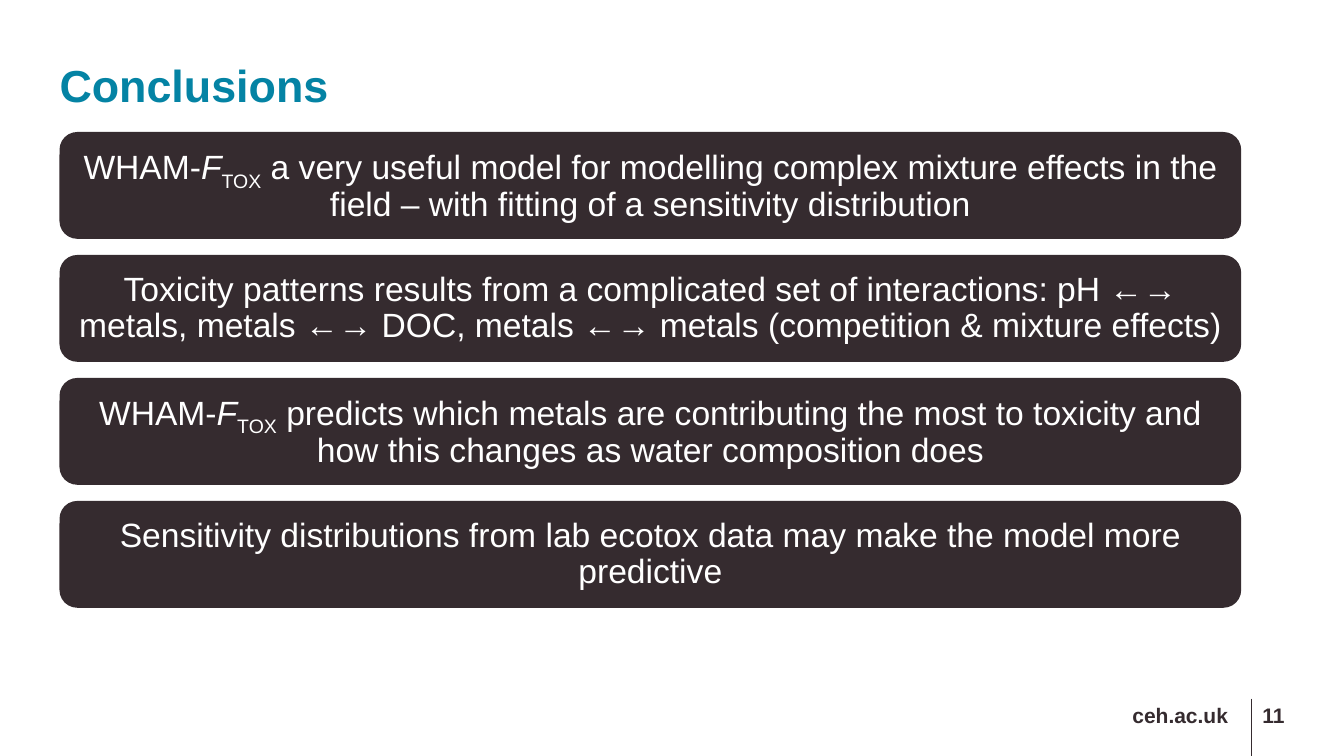
"""Build the Conclusions slide with four statement panels and a footer."""
from lxml import etree
from pptx import Presentation
from pptx.dml.color import RGBColor
from pptx.enum.shapes import MSO_CONNECTOR as Connector, MSO_SHAPE as Shape
from pptx.enum.text import MSO_ANCHOR as Anchor, PP_ALIGN as Align
from pptx.oxml.ns import qn
from pptx.util import Inches, Pt

COLORS = {"title": "0483A4", "dark": "352B2F", "white": "FFFFFF"}
LEFT, PANEL_TOP = 0.59, 1.31
PANEL_WIDTH, PANEL_HEIGHT, ROW_PITCH = 11.72, 1.06, 1.22
RULE_X, FOOTER_TOP, FOOTER_HEIGHT = 12.41, 7, 0.27

MODEL = [("WHAM-", ""), ("F", "italic"), ("TOX", "subscript")]
CONCLUSIONS = [
    MODEL + [(" a very useful model for modelling complex mixture effects in the field"
              " – with fitting of a sensitivity distribution", "")],
    [("Toxicity patterns results from a complicated set of interactions: pH ←→ metals,"
      " metals ←→ DOC, metals ←→ metals (competition & mixture effects)", "")],
    MODEL + [(" predicts which metals are contributing the most to toxicity and"
              " how this changes as water composition does", "")],
    [("Sensitivity distributions from lab ecotox data may make the model more predictive", "")],
]
FOOTERS = [("ceh.ac.uk", 8.04, 4.14), ("11", 12.46, 0.28)]


def set_frame(box, align, anchor, side=0, edge=0):
    """Set wrapping, margins and paragraph layout, and return the first paragraph."""
    frame = box.text_frame
    frame.word_wrap = True
    frame.vertical_anchor = anchor
    frame.margin_left = frame.margin_right = Inches(side)
    frame.margin_top = frame.margin_bottom = Inches(edge)
    para = frame.paragraphs[0]
    para.alignment = align
    para.line_spacing = 0.9
    return para


def add_span(para, text, size, color, bold=False):
    """Append a formatted run to a paragraph and return it."""
    span = para.add_run()
    span.text = text
    span.font.name = "Arial"
    span.font.size = Pt(size)
    span.font.bold = bold
    span.font.color.rgb = RGBColor.from_string(COLORS[color])
    return span


deck = Presentation()
deck.slide_width, deck.slide_height = Inches(13.33), Inches(7.5)
page = deck.slides.add_slide(deck.slide_layouts[5])

title = page.shapes.title
title.left, title.top, title.width, title.height = map(Inches, (LEFT, 0.59, 12.15, 0.56))
add_span(set_frame(title, Align.LEFT, Anchor.MIDDLE), "Conclusions", 32, "title", True)

for row, conclusion in enumerate(CONCLUSIONS):
    panel = page.shapes.add_shape(
        Shape.ROUNDED_RECTANGLE, Inches(LEFT), Inches(PANEL_TOP + row * ROW_PITCH),
        Inches(PANEL_WIDTH), Inches(PANEL_HEIGHT))
    panel.shadow.inherit = False
    panel.fill.solid()
    panel.fill.fore_color.rgb = RGBColor.from_string(COLORS["dark"])
    panel.line.fill.background()
    para = set_frame(panel, Align.CENTER, Anchor.MIDDLE, 0.1, 0.05)
    for text, style in conclusion:
        span = add_span(para, text, 24, "white")
        if style == "italic":
            span.font.italic = True
        elif style == "subscript":
            span.font._element.set("baseline", "-25000")

rule = page.shapes.add_connector(
    Connector.STRAIGHT, Inches(RULE_X), Inches(6.93), Inches(RULE_X), deck.slide_height)
rule.line.color.rgb = RGBColor.from_string(COLORS["dark"])
rule.line.width = Pt(0.25)
etree.SubElement(rule._element.spPr, qn("a:effectLst"))

for text, left, width in FOOTERS:
    box = page.shapes.add_textbox(
        Inches(left), Inches(FOOTER_TOP), Inches(width), Inches(FOOTER_HEIGHT))
    add_span(set_frame(box, Align.RIGHT, Anchor.TOP), text, 15, "dark", True)

deck.save("out.pptx")
